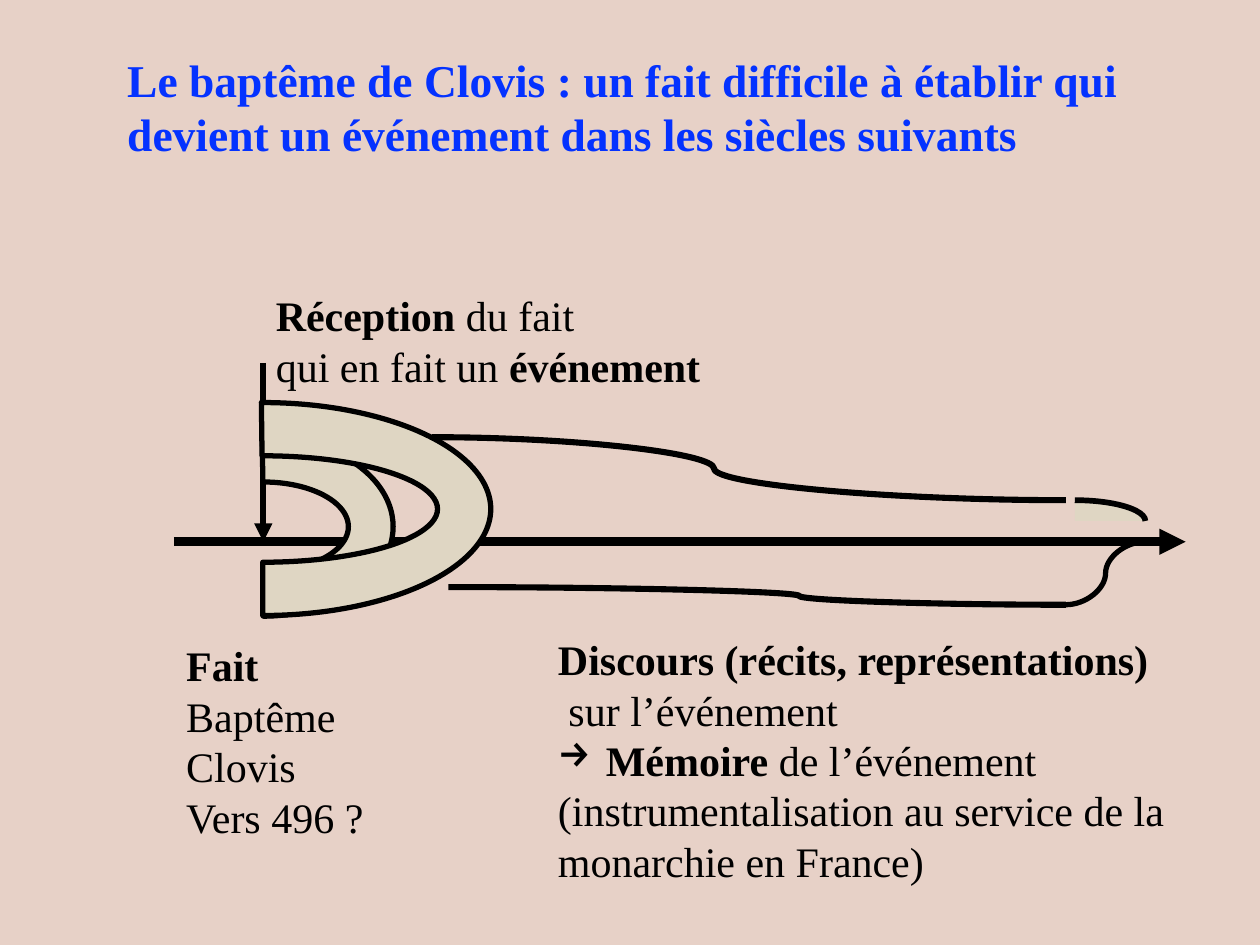
from dataclasses import dataclass

from lxml.etree import SubElement
from pptx import Presentation
from pptx.dml.color import RGBColor
from pptx.enum.shapes import MSO_CONNECTOR, MSO_SHAPE
from pptx.enum.text import MSO_ANCHOR, MSO_AUTO_SIZE, PP_ALIGN
from pptx.oxml.ns import qn
from pptx.util import Emu, Pt


@dataclass(frozen=True)
class Theme:
    font: str = "Times New Roman"
    title_size: int = 26
    body_size: int = 24
    paper: RGBColor = RGBColor(0xE7, 0xD1, 0xC7)
    sand: RGBColor = RGBColor(0xDF, 0xD6, 0xC3)
    ink: RGBColor = RGBColor(0, 0, 0)
    blue: RGBColor = RGBColor(0x04, 0x32, 0xFF)


THEME = Theme()
PX_PER_INCH = 100


def px(length):
    return Emu(length * 914400 // PX_PER_INCH)


def style_paragraph(para, size, color):
    para.font.name = THEME.font
    para.font.size = Pt(size)
    para.font.color.rgb = color


def add_title(page, left, top, width, height):
    title = page.shapes.title
    title.left, title.top = px(left), px(top)
    title.width, title.height = px(width), px(height)
    frame = title.text_frame
    frame.word_wrap = True
    frame.auto_size = MSO_AUTO_SIZE.NONE
    frame.vertical_anchor = MSO_ANCHOR.TOP
    para = frame.paragraphs[0]
    para.text = (
        "Le baptême de Clovis : un fait difficile à établir qui "
        "devient un événement dans les siècles suivants"
    )
    para.alignment = PP_ALIGN.LEFT
    style_paragraph(para, THEME.title_size, THEME.blue)
    para.font.bold = True


def add_bullet(para, symbol, indent):
    properties = para._p.get_or_add_pPr()
    properties.set("marL", str(px(indent)))
    properties.set("indent", str(-px(indent)))
    SubElement(properties, qn("a:buChar")).set("char", symbol)


def add_caption(page, left, top, width, height, lines, bullets=None):
    box = page.shapes.add_textbox(px(left), px(top), px(width), px(height))
    frame = box.text_frame
    frame.word_wrap = True
    for index, spans in enumerate(lines):
        para = frame.paragraphs[0] if index == 0 else frame.add_paragraph()
        if bullets and index in bullets:
            add_bullet(para, bullets[index], 38)
        style_paragraph(para, THEME.body_size, THEME.ink)
        for text, bold in spans:
            span = para.add_run()
            span.text = text
            span.font.bold = bold


def add_line(page, start, end, weight, kind=MSO_CONNECTOR.STRAIGHT, bend=None, arrow=False):
    line = page.shapes.add_connector(kind, *map(px, start + end))
    line.line.color.rgb = THEME.ink
    line.line.width = Pt(weight)
    properties = line._element.spPr
    if bend is not None:
        guides = properties.find(qn("a:prstGeom")).get_or_add_avLst()
        guide = SubElement(guides, qn("a:gd"))
        guide.set("name", "adj1")
        guide.set("fmla", f"val {bend * 1000}")
    if arrow:
        SubElement(properties.find(qn("a:ln")), qn("a:tailEnd")).set("type", "triangle")
    SubElement(properties, qn("a:effectLst"))


def add_arc(page, kind, left, top, width, height, weight):
    arc = page.shapes.add_shape(kind, px(left), px(top), px(width), px(height))
    arc.shadow.inherit = False
    arc.fill.solid()
    arc.fill.fore_color.rgb = THEME.sand
    arc.line.color.rgb = THEME.ink
    arc.line.width = Pt(weight)
    return arc


def add_wave(page, left, top, width, height):
    arc = add_arc(page, MSO_SHAPE.BLOCK_ARC, left, top, width, height, 3)
    arc.rotation = 90
    for index, value in enumerate((107.575, 0, 0.25)):
        arc.adjustments[index] = value


def add_timeline(page, left, top, width, height):
    def at(x, y):
        return left + x, top + y

    curve = MSO_CONNECTOR.CURVE
    add_line(page, at(0, height), at(width, height), 5, arrow=True)
    add_line(page, at(71, 0), at(71, height), 3.5, arrow=True)
    add_wave(page, *at(0, 27), 142, 206)
    add_wave(page, *at(-14, -65), 169, 362)
    add_line(page, at(205, 59), at(708, 109), 3.5, curve, 44.5)
    add_line(page, at(218, 178), at(708, 192), 3.5, curve, 56.8)
    add_arc(page, MSO_SHAPE.ARC, *at(659, 109), 112, 33, 3.25)
    add_line(page, at(708, 192), at(771, height), 3, curve, 50)


def build():
    deck = Presentation()
    deck.slide_width, deck.slide_height = px(1000), px(750)
    page = deck.slides.add_slide(deck.slide_layouts[5])
    page.background.fill.solid()
    page.background.fill.fore_color.rgb = THEME.paper

    add_title(page, 91, 36, 925, 98)
    add_timeline(page, 138, 288, 803, 142)
    add_caption(page, 209, 225, 409, 91, [
        [("Réception", True), (" du fait", False)],
        [("qui en fait un ", False), ("événement", True)],
    ])
    add_caption(page, 433, 498, 539, 212, [
        [("Discours (récits, représentations)", True)],
        [(" sur l’événement", False)],
        [("Mémoire", True), (" de l’événement", False)],
        [("(instrumentalisation au service de la monarchie en France)", False)],
    ], bullets={2: "→"})
    add_caption(page, 138, 503, 174, 172, [
        [("Fait", True)],
        [("Baptême", False)],
        [("Clovis", False)],
        [("Vers 496 ?", False)],
    ])
    deck.save("out.pptx")


if __name__ == "__main__":
    build()
